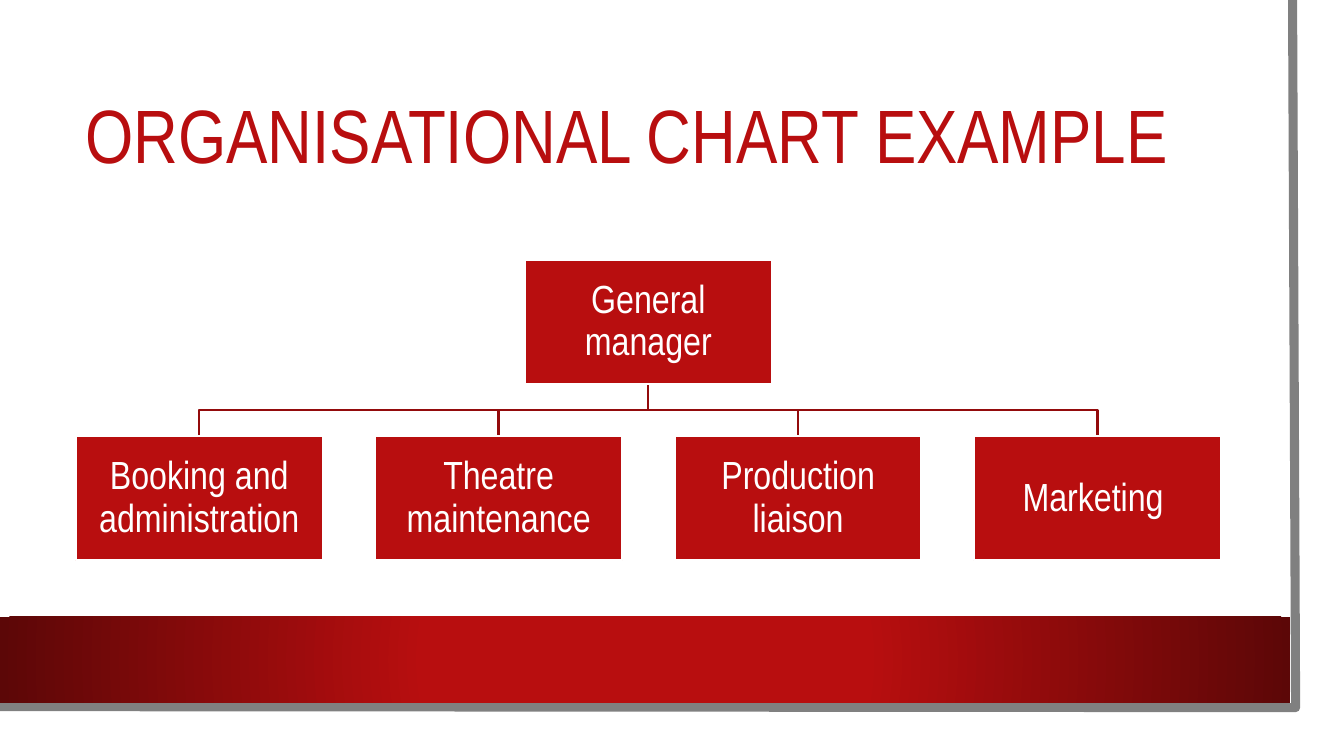
from dataclasses import dataclass

from lxml.etree import SubElement
from pptx import Presentation
from pptx.dml.color import RGBColor
from pptx.enum.shapes import MSO_SHAPE
from pptx.enum.text import MSO_ANCHOR, PP_ALIGN
from pptx.oxml.ns import qn
from pptx.shapes.autoshape import Shape
from pptx.slide import Slide
from pptx.text.text import TextFrame
from pptx.util import Inches, Pt

COLORS = {
    "white": "FFFFFF",
    "red": "B80E0F",
    "dark_red": "5C0707",
    "branch": "930B0C",
    "edge": "808080",
}
FONT = "Arial Narrow"
BOX_W, BOX_H = 2.45, 1.23
CENTRE_X, PITCH = 6.43, 2.97
MANAGER_TOP, TEAM_TOP = 2.58, 4.33
TEAMS = ["Booking and administration", "Theatre maintenance",
         "Production liaison", "Marketing "]


@dataclass
class Post:
    """A box of the chart, placed by the middle of its top edge."""
    label: str
    centre: float
    top: float


def rgb(name: str) -> RGBColor:
    return RGBColor.from_string(COLORS[name])


def add_rect(s: Slide, left: float, top: float, width: float, height: float) -> Shape:
    sp = s.shapes.add_shape(MSO_SHAPE.RECTANGLE, Inches(left), Inches(top),
                            Inches(width), Inches(height))
    sp.shadow.inherit = False
    sp.line.fill.background()
    sp.fill.solid()
    sp.fill.fore_color.rgb = rgb("white")
    return sp


def add_path(s: Slide, points: list[tuple[float, float]], color: str, weight: float) -> None:
    """Draw an open, unfilled line through the points."""
    (x, y), *rest = [(Inches(px), Inches(py)) for px, py in points]
    builder = s.shapes.build_freeform(x, y)
    builder.add_line_segments(rest, close=False)
    sp = builder.convert_to_shape()
    sp.shadow.inherit = False
    sp.fill.background()
    sp.line.color.rgb = rgb(color)
    sp.line.width = Pt(weight)


def write(tf: TextFrame, text: str, size: float, color: str, align: PP_ALIGN) -> None:
    tf.word_wrap = True
    tf.vertical_anchor = MSO_ANCHOR.MIDDLE
    p = tf.paragraphs[0]
    p.text = text
    p.alignment = align
    p.line_spacing = 0.9
    p.font.name = FONT
    p.font.size = Pt(size)
    p.font.color.rgb = rgb(color)


def add_band(s: Slide) -> None:
    """Add the bottom band, shaded from its centre outwards."""
    fill = add_rect(s, 0, 6.12, 12.8, 0.85).fill
    fill.gradient()
    stops = zip(fill.gradient_stops, [(0.34, "red"), (1, "dark_red")])
    for stop, (position, color) in stops:
        stop.position = position
        stop.color.rgb = rgb(color)
    grad = s.shapes[-1]._element.spPr.find(qn("a:gradFill"))
    grad.remove(grad.find(qn("a:lin")))
    radial = SubElement(grad, qn("a:path"), {"path": "circle"})
    SubElement(radial, qn("a:fillToRect"), dict.fromkeys("ltrb", "50000"))


def add_post(s: Slide, post: Post) -> None:
    sp = add_rect(s, post.centre - BOX_W / 2, post.top, BOX_W, BOX_H)
    sp.fill.fore_color.rgb = rgb("red")
    sp.line.color.rgb = rgb("white")
    sp.line.width = Pt(1.5)
    tf = sp.text_frame
    tf.margin_left = tf.margin_right = tf.margin_top = tf.margin_bottom = Inches(0.02)
    write(tf, post.label, 28, "white", PP_ALIGN.CENTER)


def add_branch(s: Slide, parent: Post, child: Post) -> None:
    start = parent.top + BOX_H
    middle = (start + child.top) / 2
    add_path(s, [(parent.centre, start), (parent.centre, middle),
                 (child.centre, middle), (child.centre, child.top)], "branch", 1.5)


def main() -> None:
    prs = Presentation()
    prs.slide_width, prs.slide_height = Inches(13.33), Inches(7.5)
    s = prs.slides.add_slide(prs.slide_layouts[6])

    add_rect(s, 0, 0, 13.1, 7.27)
    add_path(s, [(12.82, 0), (12.85, 7.02), (-0.03, 7.01)], "edge", 6.5)
    add_band(s)

    title = s.shapes.add_textbox(Inches(0.75), Inches(0.75), Inches(11.37), Inches(1.26))
    write(title.text_frame, "ORGANISATIONAL CHART EXAMPLE", 54, "red", PP_ALIGN.LEFT)

    manager = Post("General manager", CENTRE_X, MANAGER_TOP)
    middle = (len(TEAMS) - 1) / 2
    teams = [Post(label, CENTRE_X + (i - middle) * PITCH, TEAM_TOP)
             for i, label in enumerate(TEAMS)]
    for team in teams:
        add_branch(s, manager, team)
    for post in [manager, *teams]:
        add_post(s, post)

    prs.save("out.pptx")


if __name__ == "__main__":
    main()
